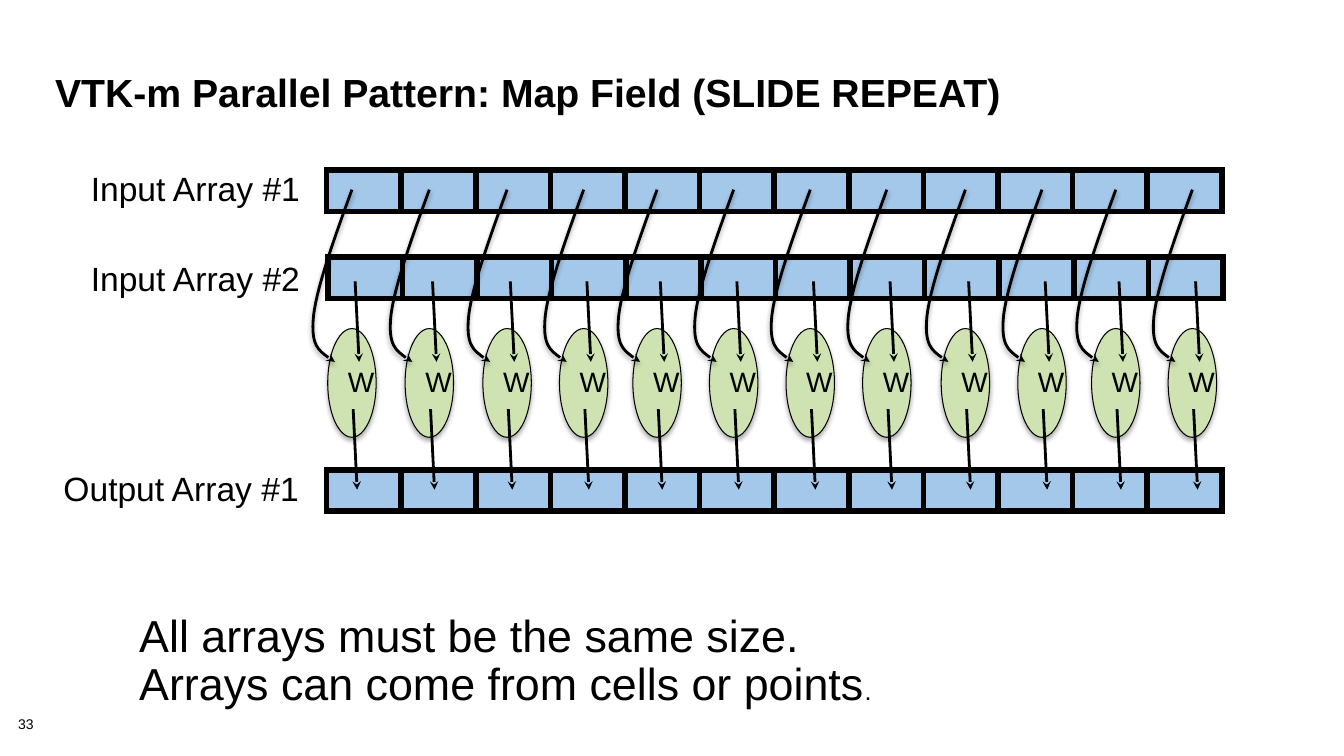
import pptx
import pptx.util
import pptx.dml.color
import pptx.enum.shapes
import pptx.enum.text
import pptx.oxml
import pptx.oxml.ns

Cm = pptx.util.Cm
Pt = pptx.util.Pt

COLORS = {"ink": "000000", "cell": "A3C8EA", "worker": "CEE3B1"}
FONT = "Arial"
TITLE = "VTK-m Parallel Pattern: Map Field (SLIDE REPEAT)"
PAGE_NUMBER = "33"
ARRAYS = [
    ("Input Array #1", (1.96, 4.09, 5.99, 1.45), (8.23, 4.29)),
    ("Input Array #2", (1.96, 6.35, 5.99, 1.45), (8.26, 6.48)),
    ("Output Array #1", (1.27, 11.63, 6.65, 1.45), (8.23, 11.84)),
]
CLOSING = [
    [("All arrays must be the same size.", 32)],
    [("Arrays can come from cells or points", 32), (".", 18)],
]
CELL_COUNT = 12
CELL_WIDTH, CELL_HEIGHT = 1.88, 1.04
WORKER_LEFTS = [8.26, 10.21, 12.17, 14.1, 15.95, 17.88,
                19.81, 21.74, 23.72, 25.65, 27.51, 29.44]
WORKER_TOP, WORKER_WIDTH, WORKER_HEIGHT = 8.28, 1.22, 2.74
STRAIGHT_ARROWS = [((0.69, 7.09), (0.79, 9.12)), ((0.64, 10.31), (0.74, 12.34))]
CURVE_START = (0.61, 4.78)
CURVES = [
    [(0.16, 6.02), (-0.28, 7.24), (-0.36, 7.98)],
    [(-0.43, 8.71), (-0.13, 8.92), (0.18, 9.12)],
]
DRAWING_NS = 'xmlns:a="http://schemas.openxmlformats.org/drawingml/2006/main"'
SHADOW = (
    f'<a:effectLst {DRAWING_NS}><a:outerShdw blurRad="{Pt(3.5)}" dist="{Pt(2.2)}" '
    f'dir="5400000" rotWithShape="0"><a:srgbClr val="{COLORS["ink"]}">'
    '<a:alpha val="32000"/></a:srgbClr></a:outerShdw></a:effectLst>'
)


def color(name):
    return pptx.dml.color.RGBColor.from_string(COLORS[name])


def append_xml(parent, xml):
    parent.append(pptx.oxml.parse_xml(xml))


def write(frame, paragraphs, margins, spacing=0.9, bold=False, wrap=True,
          anchor=pptx.enum.text.MSO_ANCHOR.MIDDLE,
          alignment=pptx.enum.text.PP_ALIGN.LEFT):
    frame.auto_size = pptx.enum.text.MSO_AUTO_SIZE.NONE
    frame.word_wrap = wrap
    frame.vertical_anchor = anchor
    frame.margin_left = frame.margin_right = Cm(margins[0])
    frame.margin_top = frame.margin_bottom = Cm(margins[1])
    for index, runs in enumerate(paragraphs):
        paragraph = frame.add_paragraph() if index else frame.paragraphs[0]
        paragraph.alignment = alignment
        paragraph.line_spacing = spacing
        for text, size in runs:
            run = paragraph.add_run()
            run.text = text
            run.font.name = FONT
            run.font.size = Pt(size)
            run.font.bold = bold
            run.font.color.rgb = color("ink")


def add_text(slide, box, paragraphs, margins=(0.33, 0.25), **options):
    shape = slide.shapes.add_textbox(*map(Cm, box))
    write(shape.text_frame, paragraphs, margins, **options)
    return shape


def add_array(slide, left, top):
    frame = slide.shapes.add_table(1, CELL_COUNT, Cm(left), Cm(top),
                                   Cm(CELL_WIDTH * CELL_COUNT), Cm(CELL_HEIGHT))
    table = frame.table
    table.first_row = False
    table.horz_banding = False
    for column in table.columns:
        column.width = Cm(CELL_WIDTH)
    for cell in table.iter_cells():
        cell.fill.solid()
        cell.fill.fore_color.rgb = color("cell")
        properties = cell._tc.get_or_add_tcPr()
        for position, side in enumerate(("lnL", "lnR", "lnT", "lnB")):
            properties.insert(position, pptx.oxml.parse_xml(
                f'<a:{side} {DRAWING_NS} w="{Pt(4.5)}"><a:solidFill>'
                f'<a:srgbClr val="{COLORS["ink"]}"/></a:solidFill></a:{side}>'))


def style_arrow(shape, effects):
    shape.line.color.rgb = color("ink")
    shape.line.width = Pt(2)
    append_xml(shape.line._get_or_add_ln(), f'<a:tailEnd {DRAWING_NS} type="stealth"/>')
    append_xml(shape._element.spPr, effects)


def add_worker(slide, left):
    worker = slide.shapes.add_shape(
        pptx.enum.shapes.MSO_SHAPE.OVAL, Cm(left), Cm(WORKER_TOP),
        Cm(WORKER_WIDTH), Cm(WORKER_HEIGHT))
    worker.fill.solid()
    worker.fill.fore_color.rgb = color("worker")
    worker.line.color.rgb = color("ink")
    worker.line.width = Pt(0.75)
    append_xml(worker._element.spPr, SHADOW)
    write(worker.text_frame, [[("W", 20)]], (0.33, 0.18),
          alignment=pptx.enum.text.PP_ALIGN.CENTER)


def add_straight_arrow(slide, left, start, end):
    arrow = slide.shapes.add_connector(
        pptx.enum.shapes.MSO_CONNECTOR.STRAIGHT,
        Cm(left + start[0]), Cm(start[1]), Cm(left + end[0]), Cm(end[1]))
    style_arrow(arrow, f"<a:effectLst {DRAWING_NS}/>")


def add_curved_arrow(slide, left):
    def place(point):
        return Cm(left + point[0]), Cm(point[1])

    builder = slide.shapes.build_freeform(*place(CURVE_START))
    builder.add_line_segments([place(curve[-1]) for curve in CURVES], close=False)
    arrow = builder.convert_to_shape()
    segments = list(arrow._element.iter(pptx.oxml.ns.qn("a:lnTo")))
    for segment, curve in zip(segments, CURVES):
        points = "".join(f'<a:pt x="{x - arrow.left}" y="{y - arrow.top}"/>'
                         for x, y in map(place, curve))
        segment.getparent().replace(segment, pptx.oxml.parse_xml(
            f"<a:cubicBezTo {DRAWING_NS}>{points}</a:cubicBezTo>"))
    arrow.fill.background()
    style_arrow(arrow, SHADOW)


def main():
    presentation = pptx.Presentation()
    presentation.slide_width, presentation.slide_height = Cm(33.87), Cm(19.05)
    slide = presentation.slides.add_slide(presentation.slide_layouts[5])

    title = slide.shapes.title
    title.left, title.top, title.width, title.height = map(Cm, (1.14, 1.65, 31.55, 2.13))
    write(title.text_frame, [[(TITLE, 28)]], (0.25, 0.25), spacing=0.85, bold=True,
          anchor=pptx.enum.text.MSO_ANCHOR.TOP)
    add_text(slide, (0.46, 18.08, 1.42, 0.41), [[(PAGE_NUMBER, 10)]], (0, 0),
             anchor=pptx.enum.text.MSO_ANCHOR.TOP)

    for label, label_box, corner in ARRAYS:
        add_text(slide, label_box, [[(label, 24)]], wrap=False)
        add_array(slide, *corner)
    for left in WORKER_LEFTS:
        add_worker(slide, left)
        for start, end in STRAIGHT_ARROWS:
            add_straight_arrow(slide, left, start, end)
        add_curved_arrow(slide, left)
    add_text(slide, (3.18, 15.19, 19.25, 2.97), CLOSING, wrap=False)

    presentation.save("out.pptx")


if __name__ == "__main__":
    main()
